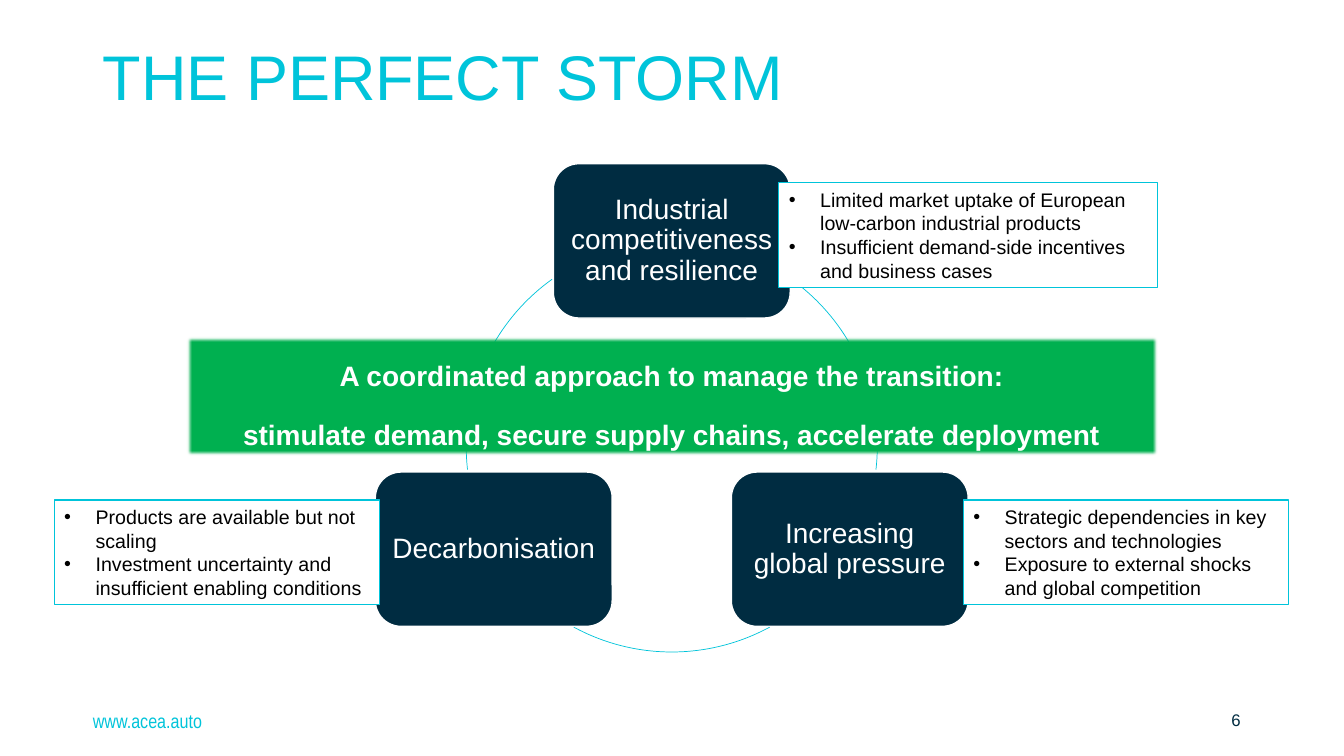
from dataclasses import dataclass
from math import cos, radians, sin

from lxml.etree import SubElement
from pptx import Presentation
from pptx.dml.color import RGBColor as RGB
from pptx.enum.shapes import MSO_SHAPE as SHAPE
from pptx.enum.text import MSO_ANCHOR as ANCHOR, MSO_AUTO_SIZE as FIT, PP_ALIGN as ALIGN
from pptx.oxml.ns import qn
from pptx.util import Cm, Pt


@dataclass(frozen=True)
class Theme:
    cyan: RGB = RGB(0x00, 0xC4, 0xDA)
    navy: RGB = RGB(0x00, 0x2C, 0x41)
    green: RGB = RGB(0x00, 0xB0, 0x50)
    white: RGB = RGB(0xFF, 0xFF, 0xFF)
    black: RGB = RGB(0x00, 0x00, 0x00)
    font: str = "Arial"
    narrow: str = "Arial Narrow"
    title: int = 45
    node: int = 20
    body: int = 14
    number: int = 12


T = Theme()


def write(tf, *lines, size=T.body, color=T.black, font=T.font, bold=False,
          align=ALIGN.LEFT, anchor=ANCHOR.MIDDLE, insets=(0.25, 0.13, 0.25, 0.13),
          spacing=1.0, gap=0, bullet=False):
    tf.word_wrap = True
    tf.auto_size = FIT.NONE
    tf.vertical_anchor = anchor
    tf.margin_left, tf.margin_top, tf.margin_right, tf.margin_bottom = map(Cm, insets)
    for i, line in enumerate(lines):
        p = tf.add_paragraph() if i else tf.paragraphs[0]
        p.alignment = align
        p.line_spacing = spacing
        p.space_before = Pt(gap if i else 0)
        p.space_after = Pt(gap)
        if bullet:
            pPr = p._p.get_or_add_pPr()
            pPr.set("marL", str(Cm(0.79)))
            pPr.set("indent", str(-Cm(0.79)))
            SubElement(pPr, qn("a:buFont")).set("typeface", T.font)
            SubElement(pPr, qn("a:buChar")).set("char", "•")
        r = p.add_run()
        r.text = line
        r.font.name = font
        r.font.size = Pt(size)
        r.font.bold = bold
        r.font.color.rgb = color


def add_box(s, kind, x, y, w, h, fill=None, line=None, weight=0.75):
    sp = s.shapes.add_shape(kind, Cm(x), Cm(y), Cm(w), Cm(h))
    sp.shadow.inherit = False
    if fill is None:
        sp.fill.background()
    else:
        sp.fill.solid()
        sp.fill.fore_color.rgb = fill
    if line is None:
        sp.line.fill.background()
    else:
        sp.line.color.rgb = line
        sp.line.width = Pt(weight)
    return sp


def add_title(s, text, x, y, w, h):
    sp = s.shapes.title
    sp.left, sp.top, sp.width, sp.height = Cm(x), Cm(y), Cm(w), Cm(h)
    write(sp.text_frame, text, size=T.title, color=T.cyan, anchor=ANCHOR.TOP, spacing=0.9)


def add_cycle(s, labels, x, y, d, node_w=5.97, node_h=3.89):
    for start, end in ((305.6, 6.5), (61.5, 118.5), (173.5, 234.4)):
        arc = add_box(s, SHAPE.ARC, x, y, d, d, line=T.cyan, weight=0.5)
        arc.adjustments[0], arc.adjustments[1] = start * 0.6, end * 0.6
    radius = d / 2
    for i, label in enumerate(labels):
        angle = radians(i * 360 / len(labels) - 90)
        left = x + radius + radius * cos(angle) - node_w / 2
        top = y + radius + radius * sin(angle) - node_h / 2
        sp = add_box(s, SHAPE.ROUNDED_RECTANGLE, left, top, node_w, node_h,
                     fill=T.navy, line=T.white, weight=1)
        write(sp.text_frame, label, size=T.node, color=T.white, align=ALIGN.CENTER,
              insets=(0.15,) * 4, spacing=0.9)


def add_callout(s, points, x, y, w, h=2.64):
    sp = add_box(s, SHAPE.RECTANGLE, x, y, w, h, fill=T.white, line=T.cyan)
    write(sp.text_frame, *points, bullet=True)


def add_banner(s, lines, x, y, w, h):
    sp = add_box(s, SHAPE.RECTANGLE, x, y, w, h, fill=T.green)
    effects = sp._element.spPr.find(qn("a:effectLst"))
    SubElement(effects, qn("a:softEdge")).set("rad", str(Pt(2.5)))
    write(sp.text_frame, *lines, size=T.node, color=T.white, bold=True,
          align=ALIGN.CENTER, anchor=ANCHOR.TOP, spacing=1.5, gap=3)


def add_footer(s, site, number, x, y, w, h):
    sp = s.shapes.add_textbox(Cm(x), Cm(y), Cm(3.94), Cm(h))
    write(sp.text_frame, site, color=T.cyan, font=T.narrow, insets=(0, 0.13, 0.25, 0.13))
    sp = s.shapes.add_textbox(Cm(x + w - 2), Cm(y), Cm(2), Cm(h))
    write(sp.text_frame, number, size=T.number, color=T.navy, align=ALIGN.RIGHT)


def main():
    prs = Presentation()
    prs.slide_width, prs.slide_height = Cm(33.87), Cm(19.05)
    s = prs.slides.add_slide(prs.slide_layouts[5])
    add_title(s, "THE PERFECT STORM", 2.34, 1.02, 29.2, 1.98)
    add_cycle(s, ("Industrial competitiveness and resilience",
                  "Increasing global pressure", "Decarbonisation"), 11.75, 6.07, 10.36)
    add_callout(s, ("Products are available but not scaling",
                    "Investment uncertainty and insufficient enabling conditions"),
                1.37, 12.6, 8.2)
    add_callout(s, ("Strategic dependencies in key sectors and technologies",
                    "Exposure to external shocks and global competition"),
                24.28, 12.6, 8.2)
    add_callout(s, ("Limited market uptake of European low-carbon industrial products",
                    "Insufficient demand-side incentives and business cases"),
                19.63, 4.6, 9.53)
    add_banner(s, ("A coordinated approach to manage the transition:",
                   "stimulate demand, secure supply chains, accelerate deployment"),
               4.7, 8.48, 24.46, 3)
    add_footer(s, "www.acea.auto", "6", 2.34, 17.64, 29.18, 1.02)
    prs.save("out.pptx")


if __name__ == "__main__":
    main()
